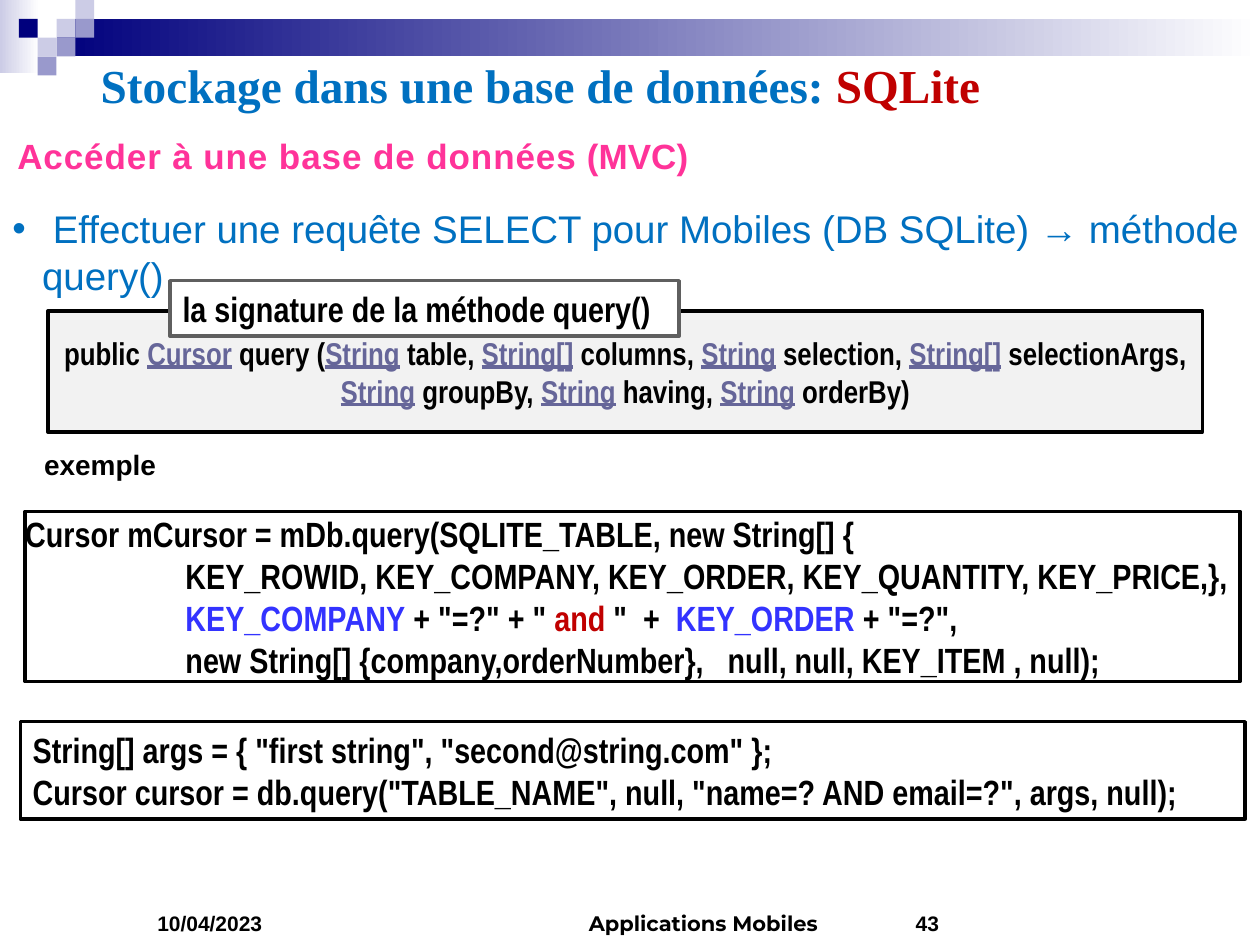
from pptx import Presentation
from pptx.dml.color import RGBColor
from pptx.enum.shapes import MSO_SHAPE
from pptx.enum.text import MSO_ANCHOR, PP_ALIGN
from pptx.oxml import parse_xml
from pptx.oxml.ns import nsdecls
from pptx.util import Cm, Pt

RECT = MSO_SHAPE.RECTANGLE
TOP, MIDDLE, BOTTOM = MSO_ANCHOR.TOP, MSO_ANCHOR.MIDDLE, MSO_ANCHOR.BOTTOM
LEFT, CENTER, RIGHT = PP_ALIGN.LEFT, PP_ALIGN.CENTER, PP_ALIGN.RIGHT
NAVY, LILAC, VIOLET = "00007D", "CCCCE6", "9999CC"
BLACK, WHITE, BLUE, RED = "000000", "FFFFFF", "0070C0", "C00000"
KEY, LINK = "3333FF", "666699"
CODE_FONT = "Arial Narrow"


def rgb(value):
    """Return the colour for a hex string."""
    return RGBColor.from_string(value)


def add_run(p, text, size=20, font="Arial", color=BLACK, bold=True, underline=False, spacing=0):
    """Append formatted text to a paragraph."""
    r = p.add_run()
    r.text = text
    r.font.size, r.font.name = Pt(size), font
    r.font.bold, r.font.underline = bold, underline
    r.font.color.rgb = rgb(color)
    if spacing:
        r.font._element.set("spc", str(spacing))


def place(sp, box):
    """Move a shape to a box given in centimetres."""
    sp.left, sp.top, sp.width, sp.height = (Cm(v) for v in box)


def set_frame(sp, anchor=TOP, insets=(0.25, 0.13), wrap=True):
    """Set anchor, insets and wrapping, and return the text frame."""
    tf = sp.text_frame
    tf.word_wrap, tf.vertical_anchor = wrap, anchor
    tf.margin_left = tf.margin_right = Cm(insets[0])
    tf.margin_top = tf.margin_bottom = Cm(insets[1])
    return tf


def add_rect(s, box, fill, line=None):
    """Add a flat rectangle, with a gradient when fill is a pair."""
    sp = s.shapes.add_shape(RECT, *(Cm(v) for v in box))
    sp.shadow.inherit = False
    if isinstance(fill, tuple):
        sp.fill.gradient()
        sp.fill.gradient_angle = 0
        for stop, color in zip(sp.fill.gradient_stops, fill):
            stop.color.rgb = rgb(color)
    else:
        sp.fill.solid()
        sp.fill.fore_color.rgb = rgb(fill)
    if line:
        sp.line.color.rgb, sp.line.width = rgb(line), Pt(2)
    else:
        sp.line.fill.background()
    return sp


def add_label(s, box, text, align=LEFT, anchor=TOP, **fmt):
    """Add a one-line text box."""
    sp = s.shapes.add_textbox(*(Cm(v) for v in box))
    p = set_frame(sp, anchor).paragraphs[0]
    p.alignment = align
    add_run(p, text, **fmt)


def add_banner(s, x, y, width):
    """Draw the gradient bar and its mosaic of squares."""
    side = 0.38
    add_rect(s, (x, y, 0.79, 1.47), (LILAC, WHITE))
    add_rect(s, (x + 3 * side, y + side, width - 3 * side, 2 * side), (NAVY, WHITE))
    squares = [(3, 1, LILAC), (4, 0, LILAC), (4, 1, VIOLET), (2, 2, LILAC),
               (1, 1, NAVY), (3, 2, VIOLET), (2, 3, VIOLET)]
    for col, row, color in squares:
        add_rect(s, (x + col * side, y + row * side, side, side), color)


def fill_title(sp, box):
    """Place and write the slide title."""
    place(sp, box)
    p = set_frame(sp, MIDDLE).paragraphs[0]
    p.alignment = LEFT
    for text, color in [("Stockage dans une base de données: ", BLUE), ("SQLite", RED)]:
        add_run(p, text, size=27, font="Times New Roman", color=color)


def fill_body(sp, box):
    """Place and write the bulleted statement."""
    place(sp, box)
    p = set_frame(sp).paragraphs[0]
    p.space_before = Pt(0)
    pPr = p._p.get_or_add_pPr()
    pPr.set("marL", str(Cm(0.6)))
    pPr.set("indent", str(-Cm(0.6)))
    pPr.append(parse_xml(f'<a:buChar {nsdecls("a")} char="•"/>'))
    add_run(p, " Effectuer une requête SELECT pour Mobiles (DB SQLite) → méthode query()",
            size=22, color=BLUE, bold=False)


def add_heading(s, box):
    """Write the pink section heading."""
    sp = s.shapes.add_textbox(*(Cm(v) for v in box))
    p = set_frame(sp, wrap=False).paragraphs[0]
    add_run(p, "Accéder à une base de données", color="FF3399", spacing=50)
    add_run(p, " (MVC)", color="FF3399")


def add_signature(s, x, y):
    """Draw the method signature panel with its overlapping caption."""
    text = ("public |Cursor| query (|String| table, |String[]| columns, |String| selection, "
            "|String[]| selectionArgs, |String| groupBy, |String| having, |String| orderBy)")
    panel = add_rect(s, (x, y + 0.61, 23.27, 2.44), "F2F2F2", BLACK)
    p = set_frame(panel, MIDDLE, (0, 0.43)).paragraphs[0]
    p.alignment = CENTER
    for i, part in enumerate(text.split("|")):
        linked = i % 2 == 1
        add_run(p, part, size=18, font=CODE_FONT, color=LINK if linked else BLACK,
                underline=linked)
    caption = add_rect(s, (x + 2.46, y, 10.26, 1.12), WHITE, "5F5F5F")
    p = set_frame(caption).paragraphs[0]
    p.alignment = LEFT
    add_run(p, "la signature de la méthode query()", font=CODE_FONT)


def add_code(s, box, lines, indent=0, **frame):
    """Draw a bordered code panel whose later lines are indented."""
    tf = set_frame(add_rect(s, box, WHITE, BLACK), **frame)
    for i, runs in enumerate(lines):
        p = tf.add_paragraph() if i else tf.paragraphs[0]
        p.alignment = LEFT
        if i and indent:
            p._p.get_or_add_pPr().set("marL", str(Cm(indent)))
        for text, color in runs:
            add_run(p, text, font=CODE_FONT, color=color)


def add_footer(s, x, y):
    """Write the date, course name and slide number."""
    parts = [(0, 5.92, "10/04/2023", CENTER, "Arial"),
             (7.42, 8.05, "Applications Mobiles", RIGHT, "Montserrat"),
             (16.94, 5.92, "43", LEFT, "Arial")]
    for dx, width, text, align, font in parts:
        add_label(s, (x + dx, y, width, 1.32), text, align, BOTTOM, size=12, font=font)


def main():
    """Build the slide and save it."""
    prs = Presentation()
    prs.slide_width, prs.slide_height = Cm(25.4), Cm(19.05)
    s = prs.slides.add_slide(prs.slide_layouts[1])
    add_banner(s, 0, 0, 25.4)
    fill_title(s.shapes.title, (1.78, 0.41, 23.62, 2.59))
    fill_body(s.placeholders[1], (0, 4.01, 25.4, 2.13))
    add_heading(s, (0.1, 2.59, 14.12, 1.12))
    add_signature(s, 0.97, 5.66)
    add_label(s, (0.64, 8.89, 17.65, 0.94), "exemple", size=16)
    add_code(s, (0.51, 10.31, 24.49, 3.43), [
        [("Cursor mCursor = mDb.query(SQLITE_TABLE, new String[] {", BLACK)],
        [("KEY_ROWID, KEY_COMPANY, KEY_ORDER, KEY_QUANTITY, KEY_PRICE,},", BLACK)],
        [("KEY_COMPANY", KEY), (' + "=?" + " ', BLACK), ("and", RED), (' "  +  ', BLACK),
         ("KEY_ORDER", KEY), (' + "=?",', BLACK)],
        [("new String[] {company,orderNumber},   null, null, KEY_ITEM , null);", BLACK)],
    ], indent=3.23, anchor=MIDDLE, insets=(0, 0))
    add_code(s, (0.41, 14.55, 24.69, 1.96), [
        [('String[] args = { "first string", "second@string.com" };', BLACK)],
        [('Cursor cursor = db.query("TABLE_NAME", null, "name=? AND email=?", args, null);',
          BLACK)],
    ])
    add_footer(s, 1.27, 17.68)
    prs.save("out.pptx")


if __name__ == "__main__":
    main()
